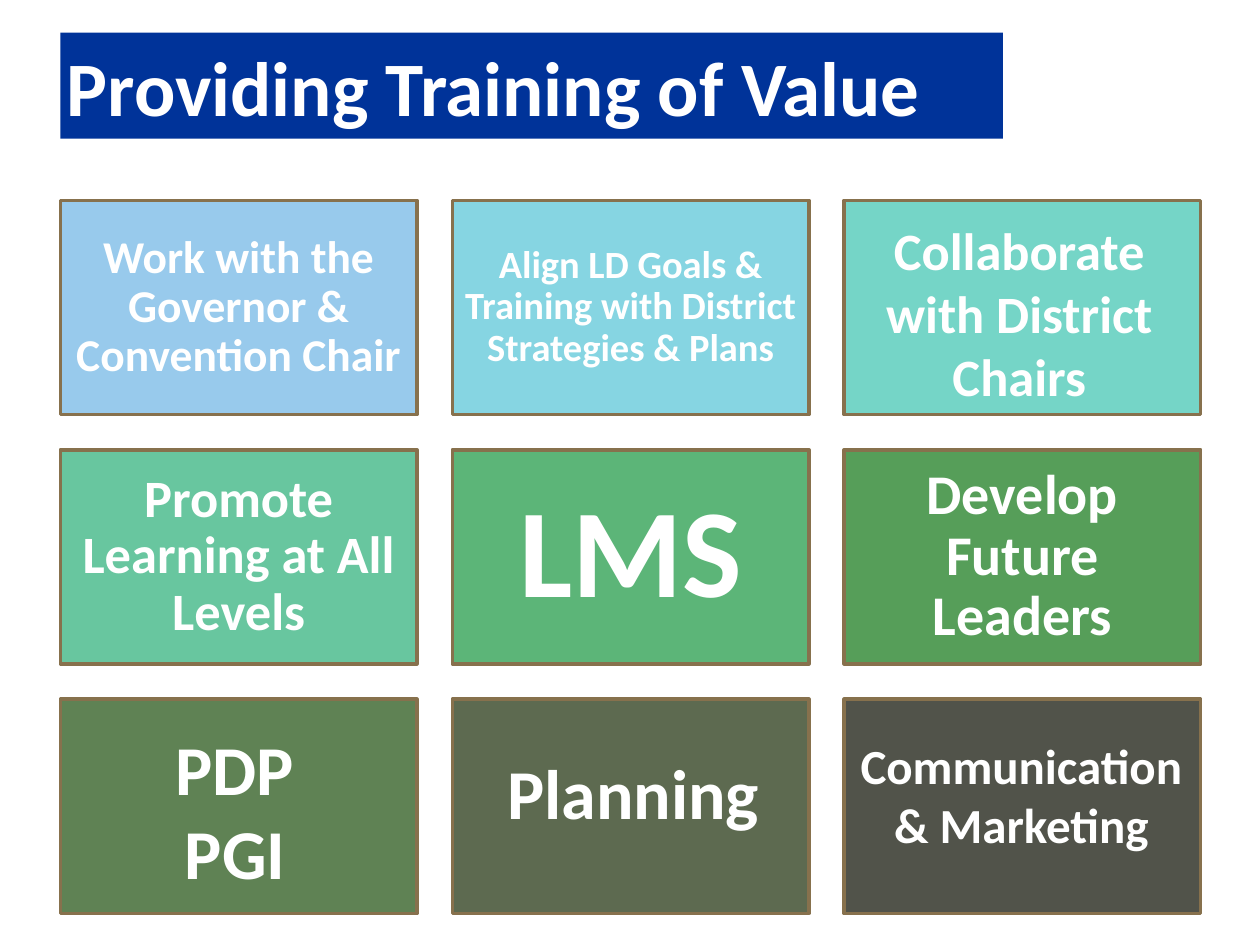
import pptx
import pptx.util
import pptx.dml.color
import pptx.enum.shapes
import pptx.enum.text
from pptx.util import Inches

RGBColor = pptx.dml.color.RGBColor
Align = pptx.enum.text.PP_ALIGN
Anchor = pptx.enum.text.MSO_ANCHOR

WHITE = RGBColor(0xFF, 0xFF, 0xFF)
NAVY = RGBColor(0x00, 0x33, 0x99)
BROWN = RGBColor(0x87, 0x71, 0x4D)
SKY = RGBColor(0x98, 0xCA, 0xEC)
AQUA = RGBColor(0x86, 0xD5, 0xE2)
TURQUOISE = RGBColor(0x75, 0xD5, 0xC7)
MINT = RGBColor(0x68, 0xC6, 0x9F)
EMERALD = RGBColor(0x5C, 0xB5, 0x78)
GREEN = RGBColor(0x56, 0x9E, 0x59)
MOSS = RGBColor(0x5F, 0x82, 0x54)
OLIVE = RGBColor(0x5D, 0x6A, 0x50)
CHARCOAL = RGBColor(0x51, 0x53, 0x4A)

LEFT, TOP = 0.48, 1.59
TILE_WIDTH, TILE_HEIGHT = 2.83, 1.7
COLUMN_STEP, ROW_STEP = 3.11, 1.98

TILES = [
    (SKY, "Work with the Governor & Convention Chair", 26, 0.11),
    (AQUA, "Align LD Goals & Training with District Strategies & Plans", 22, 0.09),
    (TURQUOISE, None, None, None),
    (MINT, "Promote Learning at All Levels", 30, 0.12),
    (EMERALD, "LMS", 72, 0.3),
    (GREEN, "Develop Future Leaders", 32, 0.13),
    (MOSS, None, None, None),
    (OLIVE, None, None, None),
    (CHARCOAL, None, None, None),
]

LABELS = [
    ("Collaborate with District Chairs", 30, (6.83, 1.68, 2.52, 1.62)),
    ("PDP\nPGI", 40, (0.62, 5.71, 2.49, 1.45)),
    ("Planning", 40, (3.78, 5.9, 2.49, 0.77)),
    ("Communication\n& Marketing", 28, (6.75, 5.79, 2.71, 1.04)),
]


class SlideBuilder:
    font_name = "Calibri"

    def __init__(self, slide):
        self.slide = slide

    def set_text(self, frame, text, size, inset, align=Align.CENTER,
                 anchor=Anchor.TOP, line_spacing=None):
        frame.text = text
        frame.word_wrap = True
        frame.auto_size = pptx.enum.text.MSO_AUTO_SIZE.NONE
        frame.vertical_anchor = anchor
        frame.margin_left = frame.margin_right = Inches(inset)
        frame.margin_top = frame.margin_bottom = Inches(inset)
        for paragraph in frame.paragraphs:
            paragraph.alignment = align
            paragraph.space_before = pptx.util.Pt(0)
            paragraph.line_spacing = line_spacing
            paragraph.font.name = self.font_name
            paragraph.font.size = pptx.util.Pt(size)
            paragraph.font.bold = True
            paragraph.font.color.rgb = WHITE

    def title(self, text, size, box):
        banner = self.slide.shapes.title
        banner.left, banner.top, banner.width, banner.height = map(Inches, box)
        banner.fill.solid()
        banner.fill.fore_color.rgb = NAVY
        self.set_text(banner.text_frame, text, size, 0.05, align=Align.LEFT)

    def tile(self, fill, text, size, inset, box):
        tile = self.slide.shapes.add_shape(
            pptx.enum.shapes.MSO_SHAPE.RECTANGLE, *map(Inches, box))
        tile.shadow.inherit = False
        tile.fill.solid()
        tile.fill.fore_color.rgb = fill
        tile.line.color.rgb = BROWN
        tile.line.width = pptx.util.Pt(2)
        if text:
            self.set_text(tile.text_frame, text, size, inset,
                          anchor=Anchor.MIDDLE, line_spacing=0.9)

    def label(self, text, size, box):
        label = self.slide.shapes.add_textbox(*map(Inches, box))
        self.set_text(label.text_frame, text, size, 0.05)


def main():
    deck = pptx.Presentation()
    deck.slide_width, deck.slide_height = Inches(10), Inches(7.5)
    builder = SlideBuilder(deck.slides.add_slide(deck.slide_layouts[5]))
    builder.title("Providing Training of Value", 44, (LEFT, 0.26, 7.48, 0.84))
    for index, (fill, text, size, inset) in enumerate(TILES):
        row, column = divmod(index, 3)
        box = (LEFT + column * COLUMN_STEP, TOP + row * ROW_STEP,
               TILE_WIDTH, TILE_HEIGHT)
        builder.tile(fill, text, size, inset, box)
    for text, size, box in LABELS:
        builder.label(text, size, box)
    deck.save("out.pptx")


if __name__ == "__main__":
    main()
